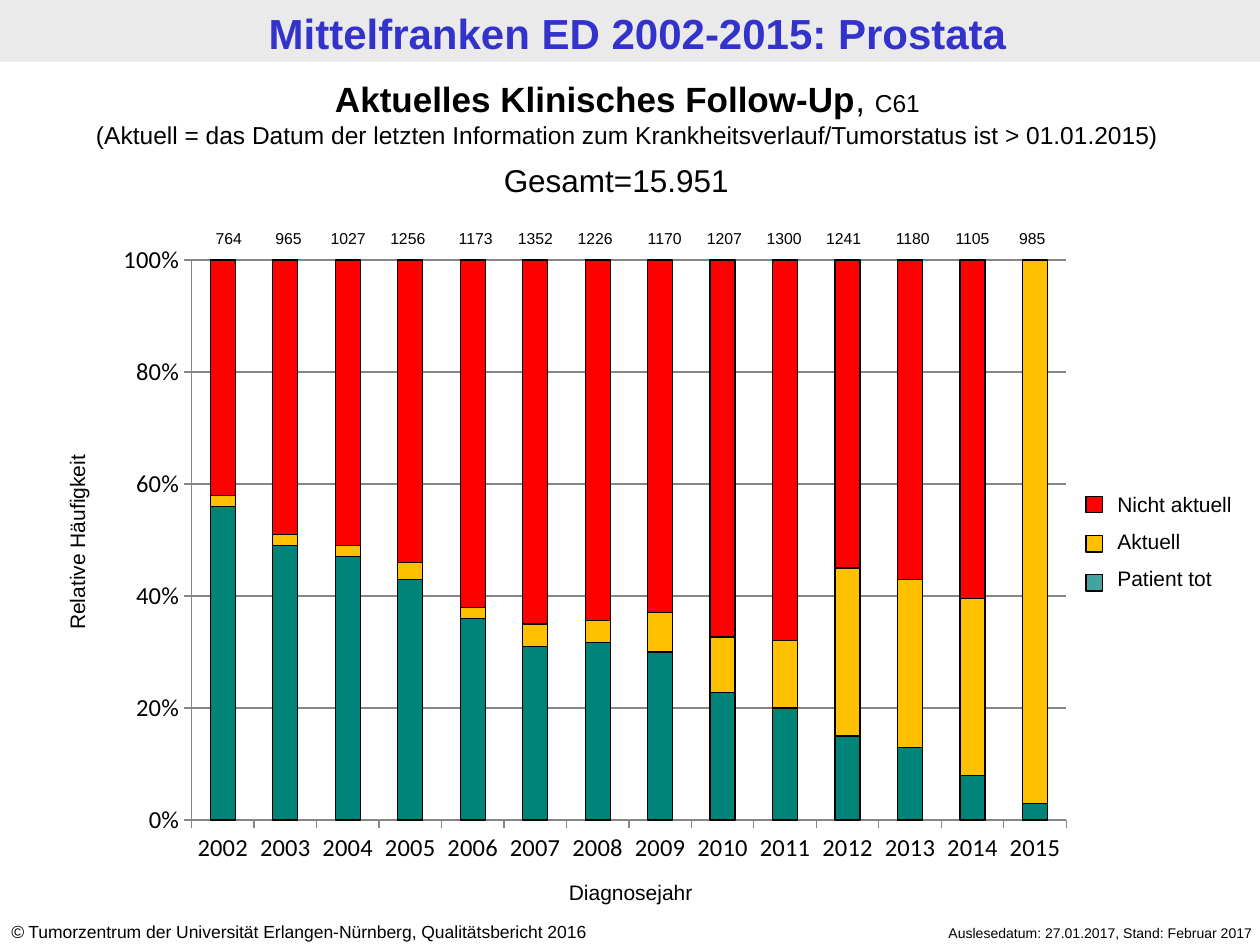
"""Build the prostate follow-up slide: stacked yearly chart with case counts."""
from dataclasses import dataclass
from typing import Any

from lxml import etree
from pptx import Presentation
from pptx.chart.data import CategoryChartData
from pptx.dml.color import RGBColor
from pptx.enum.chart import XL_CHART_TYPE, XL_TICK_MARK
from pptx.enum.shapes import MSO_SHAPE
from pptx.enum.text import PP_ALIGN
from pptx.oxml.ns import qn
from pptx.util import Pt

STACKED = XL_CHART_TYPE.COLUMN_STACKED_100
OUTSIDE = XL_TICK_MARK.OUTSIDE
RECT = MSO_SHAPE.RECTANGLE
LEFT, CENTER, RIGHT = PP_ALIGN.LEFT, PP_ALIGN.CENTER, PP_ALIGN.RIGHT


@dataclass(frozen=True)
class Theme:
    """Colours, fonts and type sizes of the slide."""
    font: str = "Arial"
    chart_font: str = "Calibri"
    black: str = "000000"
    title: str = "3333CC"
    band: str = "EAEAEA"
    grid: str = "868686"
    dead: str = "008378"
    dead_key: str = "008380"
    current: str = "FFC000"
    outdated: str = "FF0000"
    title_size: float = 24
    heading_size: float = 20
    total_size: float = 18
    note_size: float = 14
    label_size: float = 12
    footer_size: float = 10
    count_size: float = 9
    date_size: float = 8


@dataclass(frozen=True)
class Run:
    """A piece of text with one format."""
    text: str
    size: float
    bold: bool = False
    italic: bool = False
    color: str = "000000"


@dataclass(frozen=True)
class Label:
    """A text box: place in points and paragraphs of runs."""
    box: tuple[float, float, float, float]
    paragraphs: list[list[Run]]
    align: Any = CENTER
    rotation: float = 0
    gap: float = 0


@dataclass(frozen=True)
class Block:
    """A filled rectangle, outlined unless it is plain."""
    box: tuple[float, float, float, float]
    fill: str
    outlined: bool = True
    opacity: int = 100


@dataclass(frozen=True)
class Series:
    """One chart series."""
    name: str
    values: list[int | None]
    color: str


T = Theme()
YEARS = range(2002, 2016)
SERIES = [
    Series("Series 1", [56, 49, 47, 43, 36, 31, 32, 30, 23, 20, 15, 13, 8, 3], T.dead),
    Series("Series 2", [2, 2, 2, 3, 2, 4, 4, 7, 10, 12, 30, 30, 32, 97], T.current),
    Series("Series 3", [42, 49, 51, 54, 62, 65, 65, 63, 68, 68, 55, 57, 61, None], T.outdated),
]
COUNT_GROUPS = {
    110.9: [764, 965, 1027, 1256],
    252: [1173, 1352, 1226],
    360: [1170, 1207, 1300, 1241],
    501.8: [1180, 1105, 985],
}
COUNT_STEP = 34.1
KEYS = [Block((620.6, 283.7, 9.4, 9.4), T.outdated),
        Block((620.6, 306, 9.4, 9.4), T.current),
        Block((620.6, 328.3, 9.4, 9.4), T.dead_key, opacity=74)]
LABELS = [
    Label((4.3, 0.7, 720, 35.3),
          [[Run("Mittelfranken ED 2002-2015: Prostata", T.title_size, True, color=T.title)]]),
    Label((-0.7, 522.7, 377.3, 19.4),
          [[Run("©", T.footer_size, italic=True),
            Run(" Tumorzentrum der Universität Erlangen-Nürnberg, Qualitätsbericht 2016",
                T.footer_size)]], LEFT),
    Label((478.8, 524.9, 244.1, 17.3),
          [[Run("Auslesedatum: 27.01.2017, Stand: Februar 2017", T.date_size)]], RIGHT),
    Label((-42.5, 298.8, 173.5, 22.3), [[Run("Relative Häufigkeit", T.label_size)]], rotation=270),
    Label((279.4, 499, 162, 22.3), [[Run("Diagnosejahr", T.label_size)]]),
    Label((631.4, 277.2, 102.2, 65.5),
          [[Run(name, T.label_size)] for name in ("Nicht aktuell", "Aktuell", "Patient tot")],
          LEFT, gap=6.9),
    Label((-2.9, 41, 722.9, 48.2),
          [[Run("Aktuelles Klinisches Follow-Up", T.heading_size, True),
            Run(", ", T.heading_size), Run("C61", T.note_size)],
           [Run("(Aktuell = das Datum der letzten Information zum "
                "Krankheitsverlauf/Tumorstatus ist > 01.01.2015)", T.note_size)]]),
    Label((280.8, 88.6, 158.4, 28.8), [[Run("Gesamt=15.951", T.total_size)]], LEFT),
]


def set_font(font: Any, size: float, name: str, color: str, **extra: bool) -> None:
    """Apply size, typeface, colour and further attributes to a font."""
    for key, value in {"size": Pt(size), "name": name, **extra}.items():
        setattr(font, key, value)
    font.color.rgb = RGBColor.from_string(color)


def set_line(line: Any, color: str) -> None:
    """Give a line its colour and the common width."""
    line.color.rgb = RGBColor.from_string(color)
    line.width = Pt(0.75)


def add_label(s: Any, label: Label) -> None:
    """Draw one text box."""
    sp = s.shapes.add_textbox(*map(Pt, label.box))
    sp.rotation = label.rotation
    tf = sp.text_frame
    tf.word_wrap = True
    for i, runs in enumerate(label.paragraphs):
        p = tf.add_paragraph() if i else tf.paragraphs[0]
        p.alignment = label.align
        p.space_before = Pt(label.gap if i else 0)
        for run in runs:
            r = p.add_run()
            r.text = run.text
            set_font(r.font, run.size, T.font, run.color, bold=run.bold, italic=run.italic)


def add_block(s: Any, block: Block) -> None:
    """Draw one rectangle."""
    sp = s.shapes.add_shape(RECT, *map(Pt, block.box))
    sp.shadow.inherit = False
    sp.fill.solid()
    sp.fill.fore_color.rgb = RGBColor.from_string(block.fill)
    if block.outlined:
        set_line(sp.line, T.black)
    else:
        sp.line.fill.background()
    if block.opacity < 100:
        color = sp.fill._xPr.find(".//" + qn("a:srgbClr"))
        etree.SubElement(color, qn("a:alpha"), val=str(block.opacity * 1000))


def place_plot(chart: Any, **fractions: float) -> None:
    """Fix the inner plot area as fractions of the chart."""
    area = chart._chartSpace.chart.plotArea
    for old in area.findall(qn("c:layout")):
        area.remove(old)
    layout = etree.Element(qn("c:layout"))
    area.insert(0, layout)
    manual = etree.SubElement(layout, qn("c:manualLayout"))
    values = {"layoutTarget": "inner", "xMode": "edge", "yMode": "edge", **fractions}
    for key, value in values.items():
        etree.SubElement(manual, qn(f"c:{key}"), val=str(value))


def add_follow_up_chart(s: Any) -> None:
    """Draw the stacked chart of follow-up shares by year."""
    data = CategoryChartData()
    data.categories = [str(year) for year in YEARS]
    for series in SERIES:
        data.add_series(series.name, series.values)
    chart = s.shapes.add_chart(STACKED, Pt(59), Pt(133.9), Pt(561.6), Pt(367.9), data).chart
    chart.has_legend = chart.has_title = False
    set_font(chart.font, T.total_size, T.chart_font, T.black)
    plot = chart.plots[0]
    for key, value in {"gap_width": 150, "overlap": 100, "vary_by_categories": False}.items():
        setattr(plot, key, value)
    for drawn, series in zip(plot.series, SERIES):
        drawn.format.fill.solid()
        drawn.format.fill.fore_color.rgb = RGBColor.from_string(series.color)
        set_line(drawn.format.line, T.black)
    for axis in (chart.category_axis, chart.value_axis):
        axis.major_tick_mark = OUTSIDE
        set_font(axis.tick_labels.font, T.note_size, T.chart_font, T.black)
        set_line(axis.format.line, T.grid)
    scale = {"minimum_scale": 0, "maximum_scale": 1, "major_unit": 0.2, "has_major_gridlines": True}
    for key, value in scale.items():
        setattr(chart.value_axis, key, value)
    set_line(chart.value_axis.major_gridlines.format.line, T.grid)
    for key, value in {"number_format": "0%", "number_format_is_linked": False}.items():
        setattr(chart.value_axis.tick_labels, key, value)
    place_plot(chart, x=0.09, y=0.04, w=0.89, h=0.87)


def main() -> None:
    """Build and save the slide."""
    prs = Presentation()
    prs.slide_width, prs.slide_height = Pt(720), Pt(540)
    s = prs.slides.add_slide(prs.slide_layouts[6])
    add_block(s, Block((0, 0, 720, 35.3), T.band, outlined=False))
    add_follow_up_chart(s)
    for block in KEYS:
        add_block(s, block)
    counts = [Label((start + i * COUNT_STEP, 127.3, 39.6, 18), [[Run(str(n), T.count_size)]])
              for start, group in COUNT_GROUPS.items() for i, n in enumerate(group)]
    for label in LABELS + counts:
        add_label(s, label)
    prs.save("out.pptx")


if __name__ == "__main__":
    main()
